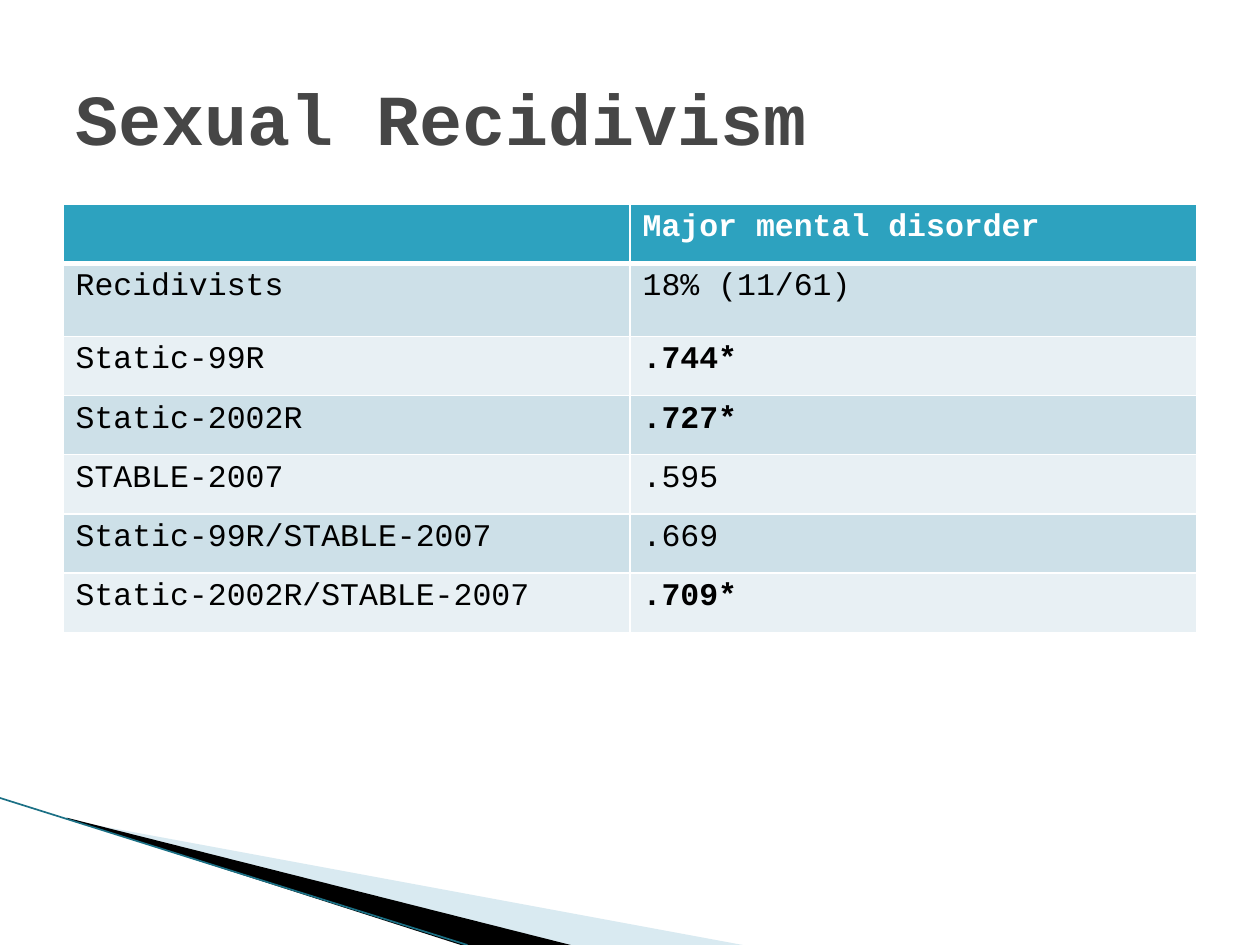
"""Build the slide on sexual recidivism: a title, a table and a corner of wedges."""
import lxml.etree
import pptx
import pptx.dml.color
import pptx.enum.shapes
import pptx.enum.text
import pptx.oxml.ns
import pptx.util

Inches = pptx.util.Inches
Pt = pptx.util.Pt
RGBColor = pptx.dml.color.RGBColor
qn = pptx.oxml.ns.qn

WHITE = RGBColor(0xFF, 0xFF, 0xFF)
BLACK = RGBColor(0, 0, 0)
GREY = RGBColor(0x46, 0x46, 0x46)
TEAL = RGBColor(0x2D, 0xA2, 0xBF)
DARK = RGBColor(0x1B, 0x70, 0x85)
PALE = RGBColor(0xA0, 0xCB, 0xDC)
BANDS = RGBColor(0xCD, 0xE0, 0xE8), RGBColor(0xE8, 0xF0, 0xF4)

FACE = "Courier New"
TITLE = {"name": FACE, "size": Pt(41), "bold": True}
HEAD = {"name": FACE, "size": Pt(18), "bold": True}
BODY = {**HEAD, "bold": False}

ROWS = [
    ("", "Major mental disorder"),
    ("Recidivists", "18% (11/61)"),
    ("Static-99R", ".744*"),
    ("Static-2002R", ".727*"),
    ("STABLE-2007", ".595"),
    ("Static-99R/STABLE-2007", ".669"),
    ("Static-2002R/STABLE-2007", ".709*"),
]
HEIGHTS = [0.47, 0.58] + [0.47] * 5


def write(frame, text, style, color):
    """Put one styled paragraph in a text frame."""
    para = frame.paragraphs[0]
    para.text = text
    for key, value in style.items():
        setattr(para.font, key, value)
    para.font.color.rgb = color


def add_title(slide, text):
    """Add the slide title."""
    box = slide.shapes.add_textbox(Inches(0.5), Inches(0.3), Inches(9), Inches(1.25))
    box.text_frame.word_wrap = True
    box.text_frame.vertical_anchor = pptx.enum.text.MSO_ANCHOR.MIDDLE
    write(box.text_frame, text, TITLE, GREY)


def set_frame(shape, frame):
    """Give an outline a new frame in inches and leave its points in place."""
    left, top, width, height = [Inches(n) for n in frame]
    route = shape._element.spPr.find(".//" + qn("a:path"))
    for point in route.iter(qn("a:pt")):
        point.set("x", str(int(point.get("x")) + shape.left - left))
        point.set("y", str(int(point.get("y")) + shape.top - top))
    route.set("w", str(width))
    route.set("h", str(height))
    place = {"left": left, "top": top, "width": width, "height": height}
    for key, value in place.items():
        setattr(shape, key, value)


def add_wedge(slide, frame, points, color, alpha=100):
    """Add a filled outline through points given in inches."""
    first, *rest = [(Inches(x), Inches(y)) for x, y in points]
    build = slide.shapes.build_freeform(*first)
    build.add_line_segments(rest)
    shape = build.convert_to_shape()
    set_frame(shape, frame)
    shape.shadow.inherit = False
    shape.line.fill.background()
    shape.fill.solid()
    shape.fill.fore_color.rgb = color
    if alpha < 100:
        tone = shape.fill._xPr.find(".//" + qn("a:srgbClr"))
        lxml.etree.SubElement(tone, qn("a:alpha"), val=str(alpha * 1000))


def add_line(slide, start, end, color, width):
    """Add a straight line between two points given in inches."""
    ends = [Inches(n) for n in start + end]
    line = slide.shapes.add_connector(pptx.enum.shapes.MSO_CONNECTOR.STRAIGHT, *ends)
    line.line.color.rgb = color
    line.line.width = Pt(width)
    lxml.etree.SubElement(line._element.spPr, qn("a:effectLst"))


def add_edges(cell, widths):
    """Give a cell white borders of the point widths keyed by side."""
    props = cell._tc.get_or_add_tcPr()
    for side, width in widths.items():
        edge = lxml.etree.SubElement(props, qn("a:ln" + side), w=str(Pt(width)))
        fill = lxml.etree.SubElement(edge, qn("a:solidFill"))
        lxml.etree.SubElement(fill, qn("a:srgbClr"), val=str(WHITE))


def add_grid(slide):
    """Add the table with a teal header and banded rows."""
    frame = slide.shapes.add_table(len(ROWS), 2, Inches(0.5), Inches(1.62),
                                   Inches(9), Inches(sum(HEIGHTS)))
    grid = frame.table
    for i, (texts, height) in enumerate(zip(ROWS, HEIGHTS)):
        grid.rows[i].height = Inches(height)
        for j, text in enumerate(texts):
            cell = grid.cell(i, j)
            add_edges(cell, {"L": 1, "R": 1, "T": 3 if i == 1 else 1,
                             "B": 3 if i == 0 else 1})
            cell.fill.solid()
            cell.fill.fore_color.rgb = BANDS[(i - 1) % 2] if i else TEAL
            style = HEAD if i == 0 or text.endswith("*") else BODY
            write(cell.text_frame, text, style, BLACK if i else WHITE)


def main():
    """Build and save the slide."""
    deck = pptx.Presentation()
    deck.slide_width, deck.slide_height = Inches(10), Inches(7.5)
    slide = deck.slides.add_slide(deck.slide_layouts[6])
    add_wedge(slide, (0.78, 5.47, 4.16, 1.58),
              [(0.55, 6.51), (5.95, 7.51), (4.56, 7.51), (0.55, 6.5)], PALE, 40)
    add_wedge(slide, (-0.06, 6.33, 4.16, 0.92),
              [(0.53, 6.49), (4.57, 7.51), (3.72, 7.52), (0.54, 6.5)], BLACK)
    add_line(slide, (-0.01, 6.33), (3.71, 7.5), DARK, 0.95)
    add_grid(slide)
    add_title(slide, "Sexual Recidivism")
    deck.save("out.pptx")


if __name__ == "__main__":
    main()
